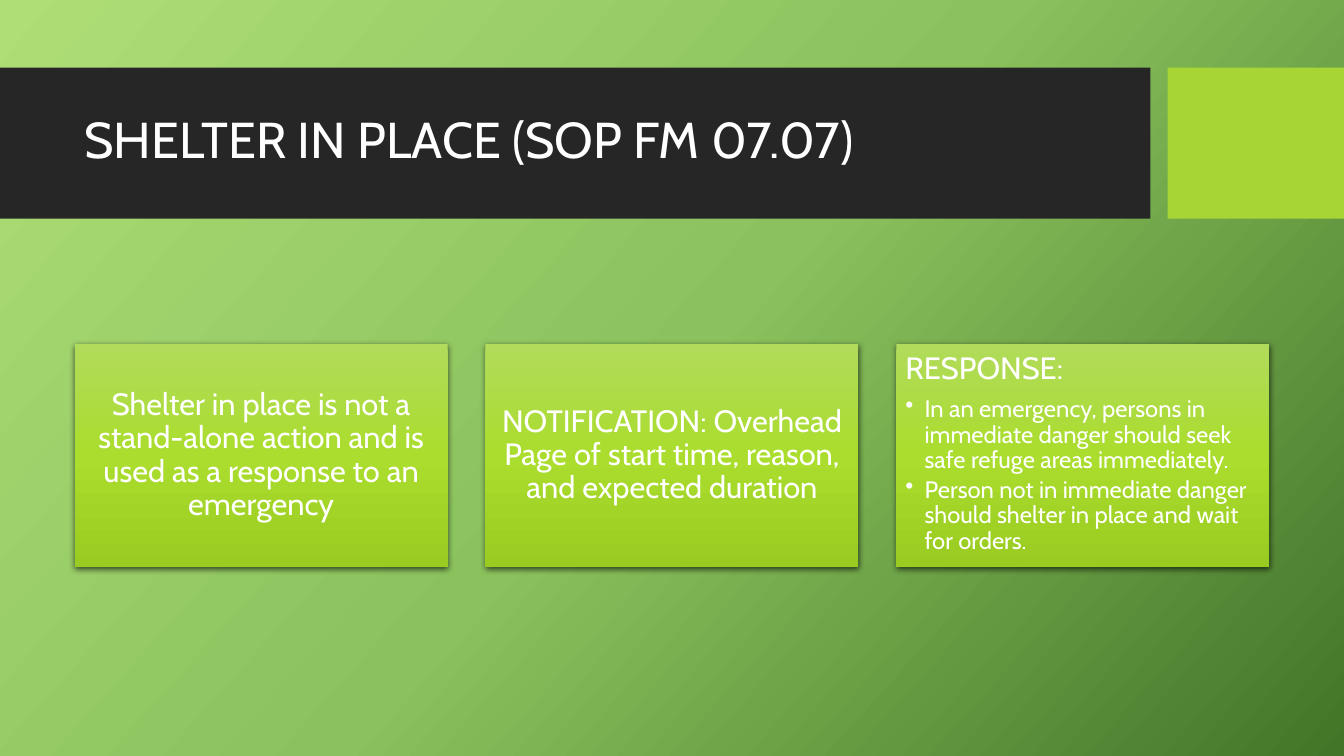
import copy

import pptx
import pptx.dml.color
import pptx.enum.shapes
import pptx.enum.text
import pptx.oxml
import pptx.oxml.ns
import pptx.util

SLIDE_W, SLIDE_H = 13.33, 7.5
FONT = "Cabin"
COLORS = {"band": "262626", "accent": "A7D535", "text": "FFFFFF", "shadow": "000000"}
BACKGROUND_STOPS = ["AFDE77", "8BC25D", "437528"]
CARD_STOPS = ["B1DB5B", "AADD2D", "9ACB21"]

HEADER_BOX = (0, 0.67, SLIDE_W, 1.5)
CARDS_BOX = (0.74, 3.41, 11.85, 2.22)
CARD_GAP = 0.375
CARD_INSET = 0.09
BULLET_INDENT = 0.19

TITLE = "SHELTER IN PLACE (SOP FM 07.07)"
CARDS = [
    ("Shelter in place is not a stand-alone action and is used as a response to an emergency", []),
    ("NOTIFICATION: Overhead Page of start time, reason, and expected duration", []),
    ("RESPONSE:", [
        "In an emergency, persons in immediate danger should seek safe refuge areas immediately.",
        "Person not in immediate danger should shelter in place and wait for orders.",
    ]),
]


def rgb(value):
    return pptx.dml.color.RGBColor.from_string(value)


def fill_gradient(fill, owner, colors, clockwise_angle):
    """Fill with three evenly spaced stops; owner is the element that holds the fill."""
    fill.gradient()
    fill.gradient_angle = 360 - clockwise_angle
    stop_list = owner.xpath(".//a:gsLst")[0]
    stop_list.insert(1, copy.deepcopy(stop_list[0]))
    for index, (stop, color) in enumerate(zip(fill.gradient_stops, colors)):
        stop.position = index / (len(colors) - 1)
        stop.color.rgb = rgb(color)


def add_rectangle(slide, box):
    rectangle = slide.shapes.add_shape(
        pptx.enum.shapes.MSO_SHAPE.RECTANGLE, *map(pptx.util.Inches, box))
    rectangle.shadow.inherit = False
    rectangle.line.fill.background()
    return rectangle


def add_shadow(shape):
    effects = shape.element.spPr.find(pptx.oxml.ns.qn("a:effectLst"))
    effects.append(pptx.oxml.parse_xml(
        f'<a:outerShdw {pptx.oxml.ns.nsdecls("a")} blurRad="{pptx.util.Pt(4.5)}" '
        f'dist="{pptx.util.Pt(1.5)}" dir="5400000" algn="ctr" rotWithShape="0">'
        f'<a:srgbClr val="{COLORS["shadow"]}"><a:alpha val="63000"/></a:srgbClr></a:outerShdw>'))


def style_paragraph(paragraph, text, size, space_after=0):
    paragraph.text = text
    paragraph.line_spacing = 0.9
    paragraph.space_after = pptx.util.Pt(space_after)
    paragraph.font.name = FONT
    paragraph.font.size = pptx.util.Pt(size)
    paragraph.font.color.rgb = rgb(COLORS["text"])


def add_bullet(paragraph):
    properties = paragraph._p.get_or_add_pPr()
    indent = pptx.util.Inches(BULLET_INDENT)
    properties.set("marL", str(indent))
    properties.set("indent", str(-indent))
    properties.append(pptx.oxml.parse_xml(
        f'<a:buChar {pptx.oxml.ns.nsdecls("a")} char="•"/>'))


def add_header(slide, box):
    left, top, width, height = box
    accent_width, gap = 1.75, 0.17
    band_width = width - accent_width - gap
    accent_left = left + width - accent_width
    parts = [("band", left, band_width), ("accent", accent_left, accent_width)]
    for color, part_left, part_width in parts:
        part = add_rectangle(slide, (part_left, top, part_width, height))
        part.fill.solid()
        part.fill.fore_color.rgb = rgb(COLORS[color])

    title_box = (left + 0.74, top + 0.15, 10.51, 1.18)
    title = slide.shapes.add_textbox(*map(pptx.util.Inches, title_box)).text_frame
    title.word_wrap = True
    title.vertical_anchor = pptx.enum.text.MSO_ANCHOR.MIDDLE
    style_paragraph(title.paragraphs[0], TITLE, 36)


def add_card(slide, box, heading, bullets):
    card = add_rectangle(slide, box)
    fill_gradient(card.fill, card.element, CARD_STOPS, 90)
    add_shadow(card)

    frame = card.text_frame
    frame.word_wrap = True
    inset = pptx.util.Inches(CARD_INSET)
    frame.margin_left = frame.margin_right = inset
    frame.margin_top = frame.margin_bottom = inset
    anchors, aligns = pptx.enum.text.MSO_ANCHOR, pptx.enum.text.PP_ALIGN
    frame.vertical_anchor = anchors.TOP if bullets else anchors.MIDDLE

    first = frame.paragraphs[0]
    first.alignment = aligns.LEFT if bullets else aligns.CENTER
    style_paragraph(first, heading, 22, space_after=7.7)
    for bullet in bullets:
        paragraph = frame.add_paragraph()
        paragraph.alignment = aligns.LEFT
        paragraph.level = 1
        add_bullet(paragraph)
        style_paragraph(paragraph, bullet, 17, space_after=2.55)


def add_cards(slide, box):
    left, top, width, height = box
    card_width = (width - CARD_GAP * (len(CARDS) - 1)) / len(CARDS)
    for column, (heading, bullets) in enumerate(CARDS):
        card_left = left + column * (card_width + CARD_GAP)
        add_card(slide, (card_left, top, card_width, height), heading, bullets)


def main():
    deck = pptx.Presentation()
    deck.slide_width = pptx.util.Inches(SLIDE_W)
    deck.slide_height = pptx.util.Inches(SLIDE_H)
    slide = deck.slides.add_slide(deck.slide_layouts[6])
    background = slide.background.fill
    fill_gradient(background, slide.element, BACKGROUND_STOPS, 42)
    add_header(slide, HEADER_BOX)
    add_cards(slide, CARDS_BOX)
    deck.save("out.pptx")


if __name__ == "__main__":
    main()
